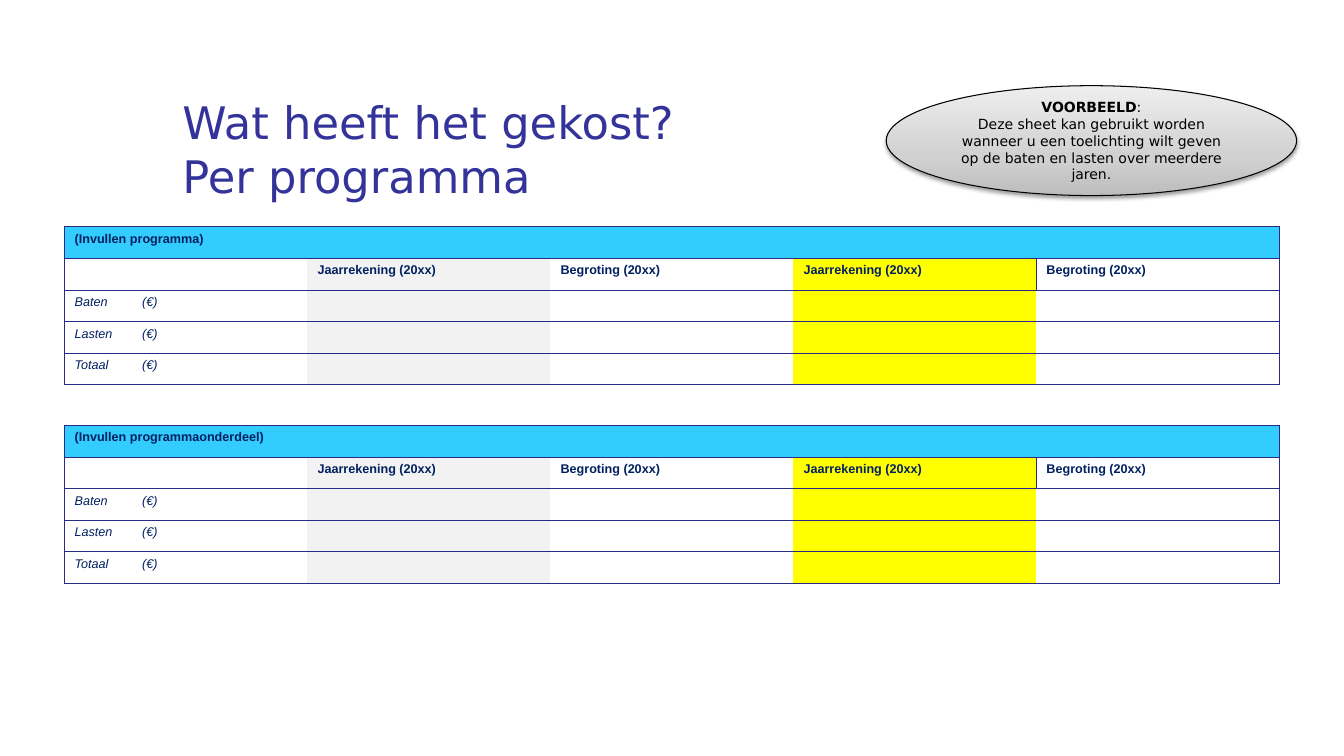
"""Build the slide with two cost tables per programme and an example note."""
from lxml.etree import SubElement
from pptx import Presentation
from pptx.dml.color import RGBColor as RGB
from pptx.enum.shapes import MSO_SHAPE as Shape
from pptx.enum.text import MSO_ANCHOR as Anchor, PP_ALIGN as Align
from pptx.oxml.ns import qn
from pptx.util import Inches, Pt

COLORS = {"title": "333399", "text": "002060", "line": "2A2A89", "head": "33CCFF",
          "past": "F2F2F2", "now": "FFFF00", "black": "000000"}
FADE = [(0, "BDBDBD"), (35000, "D1D1D1"), (100000, "EEEEEE")]
WIDTHS = [0.67, 1.74, 2.41, 2.41, 2.41, 2.41]
HEADS = ["Jaarrekening (20xx)", "Begroting (20xx)"] * 2
ITEMS = ["Baten", "Lasten", "Totaal"]
TABLES = [(2.25, "(Invullen programma)"), (4.22, "(Invullen programmaonderdeel)")]
NOTE = [[("VOORBEELD", True), (":", False)],
        [("Deze sheet kan gebruikt worden wanneer u een toelichting wilt geven "
          "op de baten en lasten over meerdere jaren.", False)]]


def style(run, color, **values):
    for name, value in values.items():
        setattr(run.font, name, value)
    run.font.color.rgb = RGB.from_string(COLORS[color])


def border(cell, sides):
    for side in sides:
        line = SubElement(cell._tc.get_or_add_tcPr(), qn(f"a:ln{side}"), w="9525")
        fill = SubElement(line, qn("a:solidFill"))
        SubElement(fill, qn("a:srgbClr"), val=COLORS["line"])


deck = Presentation()
deck.slide_width, deck.slide_height = Inches(13.33), Inches(7.5)
slide = deck.slides.add_slide(deck.slide_layouts[5])

title = slide.shapes.title
box = {"left": 1.71, "top": 0.85, "width": 11.16, "height": 1.25}
for name, value in box.items():
    setattr(title, name, Inches(value))
title.text_frame.vertical_anchor = Anchor.MIDDLE
title.text_frame.text = "Wat heeft het gekost?\vPer programma"
para = title.text_frame.paragraphs[0]
para.alignment = Align.LEFT
for run in para.runs:
    style(run, "title", size=Pt(32), name="DejaVu Sans")

for top, label in TABLES:
    rows = [[label] + [""] * 5, ["", ""] + HEADS]
    rows += [[item, "(€)"] + [""] * 4 for item in ITEMS]
    frame = slide.shapes.add_table(len(rows), len(WIDTHS), Inches(0.64), Inches(top),
                                   Inches(12.05), Inches(1.57))
    table = frame.table
    table.first_row = table.horz_banding = False
    table._tbl.tblPr.find(qn("a:tableStyleId")).text = "{2D5ABB26-0587-4C30-8999-92F81FD0307C}"
    for col, width in zip(table.columns, WIDTHS):
        col.width = Inches(width)
    table.cell(0, 0).merge(table.cell(0, 5))
    table.cell(1, 0).merge(table.cell(1, 1))
    for r, texts in enumerate(rows):
        table.rows[r].height = Inches(1.57 / len(rows))
        for c, text in enumerate(texts):
            cell = table.cell(r, c)
            left = c == 0 or (r, c) == (1, 5)
            right = c == 5 or (r, c) == (0, 0)
            border(cell, "L" * left + "R" * right + "TB")
            shade = "head" if r == 0 else {2: "past", 4: "now"}.get(c)
            if shade:
                cell.fill.solid()
                cell.fill.fore_color.rgb = RGB.from_string(COLORS[shade])
            else:
                cell.fill.background()
            para = cell.text_frame.paragraphs[0]
            if text:
                run = para.add_run()
                run.text = text
                style(run, "text", size=Pt(9), name="Arial", bold=r < 2, italic=r > 1)
            else:
                SubElement(para._p, qn("a:endParaRPr"), sz="900")

note = slide.shapes.add_shape(Shape.OVAL, Inches(8.79), Inches(0.85), Inches(4.07), Inches(1.09))
note.line.color.rgb = RGB.from_string(COLORS["black"])
note.line.width = Pt(0.75)
note.fill.gradient()
note.fill.gradient_angle = 90
stops = note._element.spPr.find(qn("a:gradFill")).find(qn("a:gsLst"))
for stop in list(stops):
    stops.remove(stop)
for pos, color in FADE:
    stop = SubElement(stops, qn("a:gs"), pos=str(pos))
    SubElement(stop, qn("a:srgbClr"), val=color)
note.shadow.inherit = False
effect = note._element.spPr.find(qn("a:effectLst"))
shadow = SubElement(effect, qn("a:outerShdw"), blurRad="39370", dist="20320",
                    dir="5400000", rotWithShape="0")
tint = SubElement(shadow, qn("a:srgbClr"), val=COLORS["black"])
SubElement(tint, qn("a:alpha"), val="38000")

body = note.text_frame
body.word_wrap = True
body.vertical_anchor = Anchor.MIDDLE
for i, parts in enumerate(NOTE):
    para = body.add_paragraph() if i else body.paragraphs[0]
    para.alignment = Align.CENTER
    for text, bold in parts:
        run = para.add_run()
        run.text = text
        style(run, "black", size=Pt(10), name="DejaVu Sans", bold=bold)

deck.save("out.pptx")
